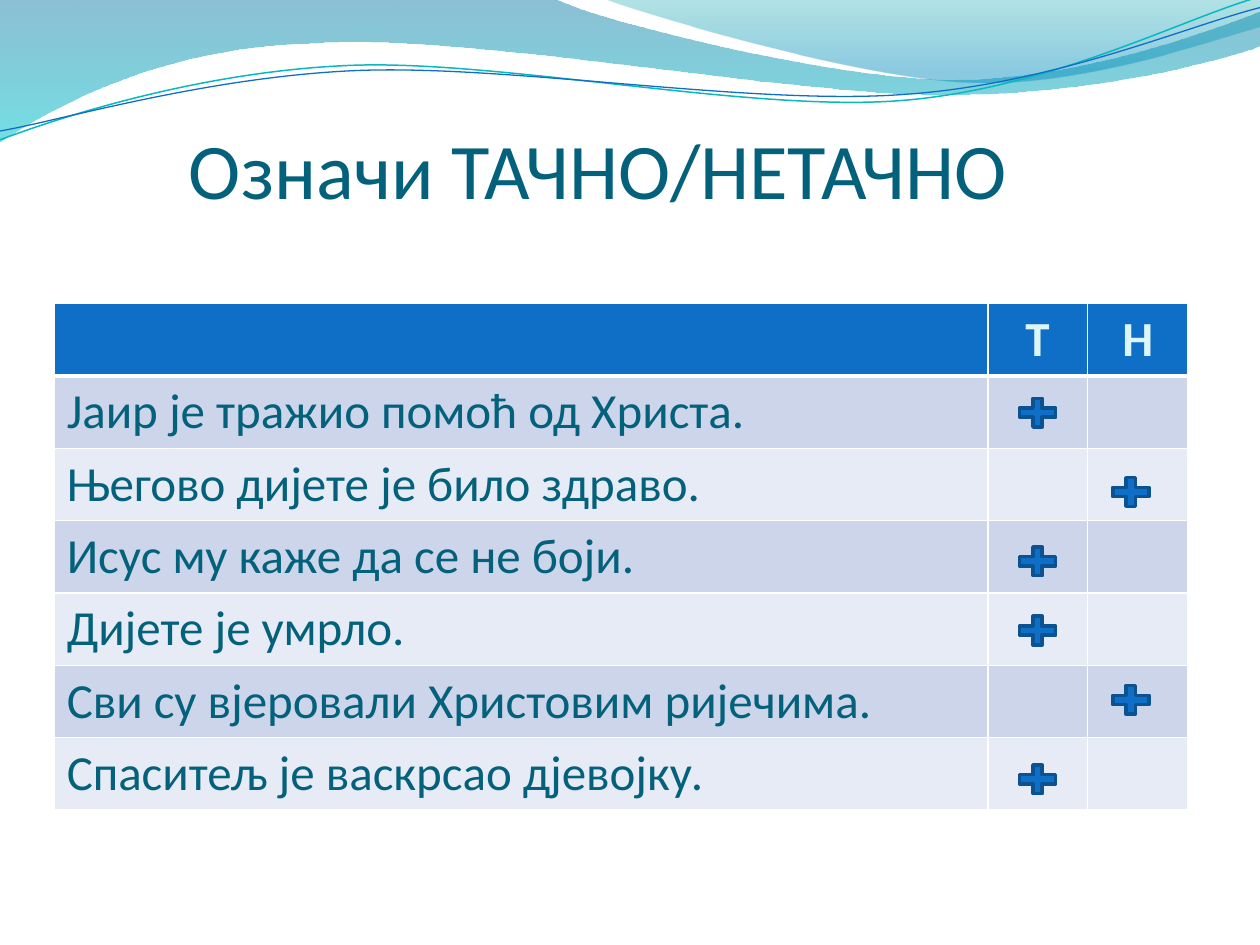
import math
import pptx
import pptx.util
import pptx.dml.color
import pptx.enum.shapes
import pptx.enum.text
import pptx.oxml
import pptx.oxml.ns

Inches, Pt = pptx.util.Inches, pptx.util.Pt
RGB = pptx.dml.color.RGBColor
ALIGN = pptx.enum.text.PP_ALIGN
SPACE = pptx.oxml.ns.nsdecls("a")
FONT = "Calibri"

WHITE = RGB(0xFF, 0xFF, 0xFF)
BLUE = RGB(0x0F, 0x6F, 0xC6)
NAVY = RGB(0x0B, 0x52, 0x92)
TEAL = RGB(0x04, 0x61, 0x7B)
AQUA = RGB(0x0A, 0xB8, 0xBF)
PALE = RGB(0xDB, 0xF5, 0xF9)
BANDS = [RGB(0xCC, 0xD5, 0xEA), RGB(0xE7, 0xEB, 0xF5)]

TITLE = "Означи ТАЧНО/НЕТАЧНО"
HEAD = ["", "Т", "Н"]
# Statement, marked column, top of the mark
ROWS = [
    ("Јаир је тражио помоћ од Христа.", "Т", 3.12),
    ("Његово дијете је било здраво.", "Н", 3.75),
    ("Исус му каже да се не боји.", "Т", 4.3),
    ("Дијете је умрло.", "Т", 4.85),
    ("Сви су вјеровали Христовим ријечима.", "Н", 5.4),
    ("Спаситељ је васкрсао дјевојку.", "Т", 6.03),
]
MARKS = {"Т": 8.04, "Н": 8.78}
COLS = [7.41, 0.79, 0.8]
TALL = 4.02
TILT = -2.7

# Outlines: a pair is a line or start point, six numbers are a curve.
# Gradient stops: position, colour, opacity in percent.
WAVES = [
    ((-0.01, -0.01, 10.02, 1.14),
     [(0, 0), (4.4, -0.01), (4.76, 0.17, 6.64, 0.63, 7.58, 0.63),
      (8.53, 0.63, 9.58, 0.26, 10, 0.09), (10.01, 0.36),
      (9.83, 0.44, 8.7, 0.76, 7.46, 0.75), (6.22, 0.75, 3.82, 0.28, 2.57, 0.34),
      (1.29, 0.36, 0.46, 0.83, -0.01, 1.13), (0, 0)],
     [(0, RGB(0x00, 0x74, 0xA1), 45), (1, RGB(0x00, 0xC6, 0xCF), 55)]),
    ((4.79, -0.01, 5.21, 0.7),
     [(4.79, -0.01), (5.09, 0.11, 6.82, 0.62, 7.69, 0.65),
      (8.56, 0.69, 9.61, 0.32, 10, 0.21), (10, 0), (4.79, -0.01)],
     [(0, RGB(0x00, 0xA1, 0xA9), 30), (0.8, RGB(0x00, 0x8B, 0xBF), 45)]),
]
LINES = [
    ((-0.02, 0.22, 10.02, 0.71),
     [(0, 1.11), (0.48, 0.93, 1.58, 0.57, 2.77, 0.52),
      (3.95, 0.47, 5.93, 0.89, 7.13, 0.8), (8.33, 0.71, 9.38, 0.15, 9.98, -0.02)],
     AQUA, 0.85),
    ((-0.02, 0.3, 10.03, 0.58),
     [(0, 1.04), (0.47, 0.96, 1.64, 0.61, 2.83, 0.56),
      (4.03, 0.51, 5.97, 0.84, 7.17, 0.75), (8.36, 0.67, 9.41, 0.21, 10, 0.06)],
     BLUE, 0.75),
]


def local(x, y, frame, tilt):
    """Place a slide point inside a frame that is turned by tilt degrees."""
    left, top, wide, high = frame
    dx, dy = x - left - wide / 2, y - top - high / 2
    cos, sin = math.cos(math.radians(tilt)), math.sin(math.radians(tilt))
    return (Inches(dx * cos + dy * sin + wide / 2),
            Inches(dy * cos - dx * sin + high / 2))


def draw(frame, outline, close, tilt=0):
    """Build a freeform, then bend its straight parts into cubic curves."""
    ends = [tuple(Inches(v) for v in part[-2:]) for part in outline]
    pen = slide.shapes.build_freeform(*ends[0])
    pen.add_line_segments(ends[1:], close=close)
    shape = pen.convert_to_shape()
    shape.left, shape.top, shape.width, shape.height = map(Inches, frame)
    shape.rotation = tilt
    shape.shadow.inherit = False
    track = shape._element.spPr.find(".//" + pptx.oxml.ns.qn("a:path"))
    track.set("w", str(shape.width))
    track.set("h", str(shape.height))
    for old, part in zip(list(track), outline):
        dots = [local(*part[i:i + 2], frame, tilt) for i in range(0, len(part), 2)]
        tag = "moveTo" if part is outline[0] else "lnTo" if len(part) == 2 else "cubicBezTo"
        body = "".join(f'<a:pt x="{x}" y="{y}"/>' for x, y in dots)
        track.replace(old, pptx.oxml.parse_xml(f"<a:{tag} {SPACE}>{body}</a:{tag}>"))
    return shape


def write(frame, text, size, color, bold=False, align=ALIGN.LEFT):
    frame.text = text
    para = frame.paragraphs[0]
    para.alignment = align
    for run in para.runs:
        font = run.font
        font.name, font.size, font.bold = FONT, Pt(size), bold
        font.color.rgb = color


def edge(cell, top, base):
    """Give a cell white borders; top and base are widths in points."""
    props = cell._tc.get_or_add_tcPr()
    widths = {"lnL": 1, "lnR": 1, "lnT": top, "lnB": base}
    for spot, (tag, width) in enumerate(widths.items()):
        props.insert(spot, pptx.oxml.parse_xml(
            f'<a:{tag} {SPACE} w="{Pt(width)}"><a:solidFill>'
            f'<a:srgbClr val="{WHITE}"/></a:solidFill></a:{tag}>'))


deck = pptx.Presentation()
deck.slide_width, deck.slide_height = Inches(10), Inches(7.5)
slide = deck.slides.add_slide(deck.slide_layouts[6])

for frame, outline, stops in WAVES:
    wave = draw(frame, outline, True)
    wave.line.fill.background()
    wave.fill.gradient()
    wave.fill.gradient_angle = 270
    for stop, (place, color, alpha) in zip(wave.fill.gradient_stops, stops):
        stop.position = place
        stop.color.rgb = color
    tones = wave._element.spPr.findall(".//" + pptx.oxml.ns.qn("a:srgbClr"))
    for tone, (place, color, alpha) in zip(tones, stops):
        tone.append(pptx.oxml.parse_xml(f'<a:alpha {SPACE} val="{alpha * 1000}"/>'))

for frame, outline, color, width in LINES:
    line = draw(frame, outline, False, TILT)
    line.fill.background()
    line.line.color.rgb = color
    line.line.width = Pt(width)

box = slide.shapes.add_textbox(Inches(1.5), Inches(0.84), Inches(6.93), Inches(0.87))
frame = box.text_frame
frame.word_wrap = True
frame.vertical_anchor = pptx.enum.text.MSO_ANCHOR.BOTTOM
frame.margin_left = frame.margin_right = frame.margin_bottom = 0
frame.margin_top = Inches(0.05)
write(frame, TITLE, 45, TEAL)

table = slide.shapes.add_table(len(ROWS) + 1, len(COLS), Inches(0.43), Inches(2.41),
                               Inches(sum(COLS)), Inches(TALL)).table
for col, width in zip(table.columns, COLS):
    col.width = Inches(width)
texts = [HEAD] + [[text, "", ""] for text, mark, top in ROWS]
for r, row in enumerate(texts):
    for c, text in enumerate(row):
        cell = table.cell(r, c)
        cell.fill.solid()
        cell.fill.fore_color.rgb = BANDS[(r - 1) % 2] if r else BLUE
        edge(cell, 3 if r == 1 else 1, 1 if r else 3)
        if text:
            write(cell.text_frame, text, 28, TEAL if r else PALE, not r,
                  ALIGN.CENTER if c else ALIGN.LEFT)

for text, mark, top in ROWS:
    plus = slide.shapes.add_shape(pptx.enum.shapes.MSO_SHAPE.MATH_PLUS,
                                  Inches(MARKS[mark]), Inches(top),
                                  Inches(0.39), Inches(0.31))
    plus.shadow.inherit = False
    plus.fill.solid()
    plus.fill.fore_color.rgb = BLUE
    plus.line.color.rgb = NAVY
    plus.line.width = Pt(2)

deck.save("out.pptx")
